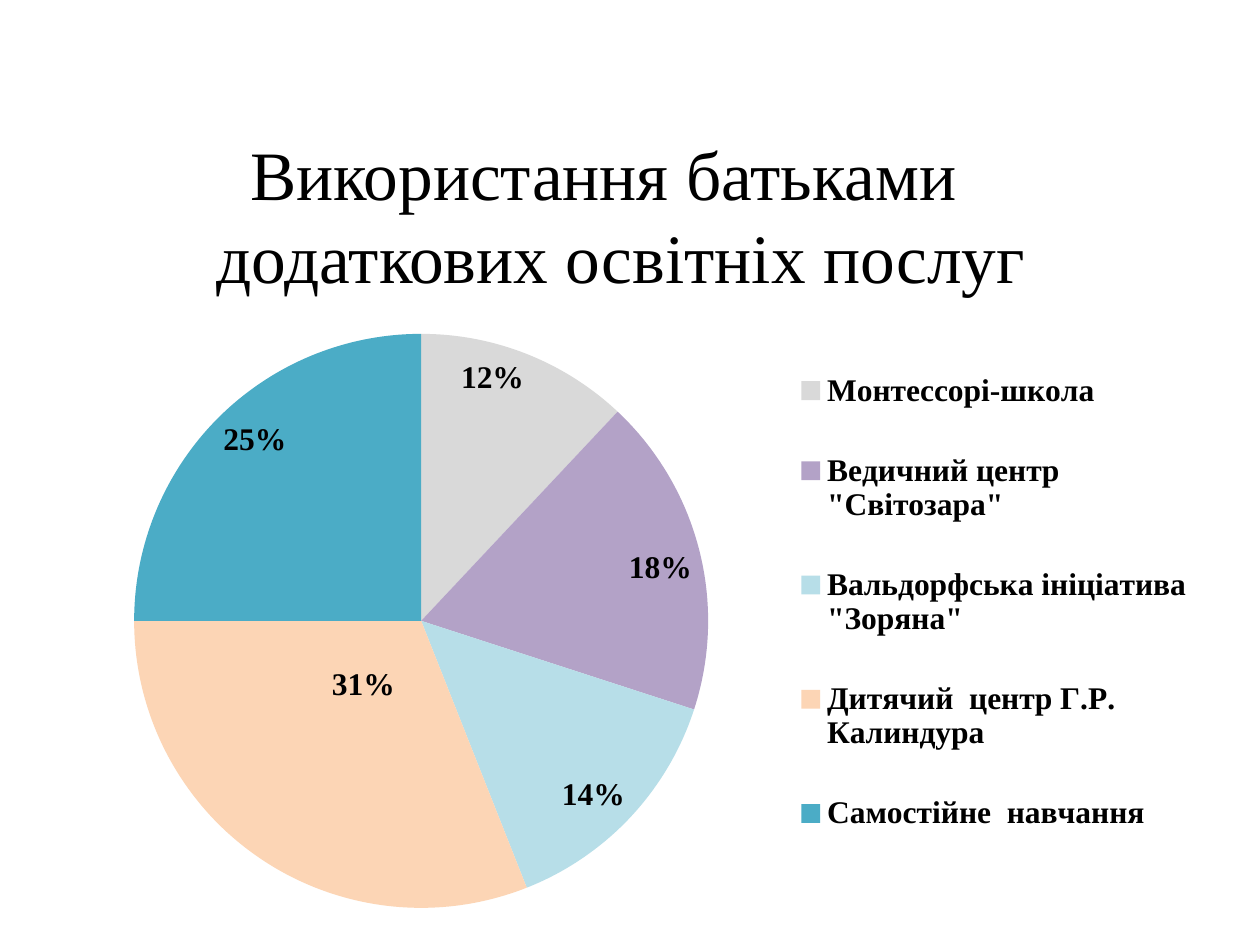
from typing import NamedTuple

import lxml.etree
import pptx
import pptx.chart.chart
import pptx.chart.data
import pptx.dml.color
import pptx.enum.chart
import pptx.enum.text
import pptx.oxml
import pptx.oxml.ns
import pptx.slide
import pptx.util

RGBColor = pptx.dml.color.RGBColor

EMU_PER_PX = 914400 // 126
FONT = "Times New Roman"
BLACK = RGBColor(0x00, 0x00, 0x00)
GREY = RGBColor(0xD9, 0xD9, 0xD9)
PURPLE = RGBColor(0xB3, 0xA2, 0xC7)
PALE_BLUE = RGBColor(0xB7, 0xDE, 0xE8)
PEACH = RGBColor(0xFC, 0xD5, 0xB5)
TEAL = RGBColor(0x4B, 0xAC, 0xC6)


class Box(NamedTuple):
    left: int
    top: int
    width: int
    height: int

    def emu(self) -> list[pptx.util.Emu]:
        return [pptx.util.Emu(length * EMU_PER_PX) for length in self]


class Service(NamedTuple):
    name: str
    percent: int
    color: RGBColor


TITLE_BOX = Box(54, 135, 1134, 158)
CHART_BOX = Box(64, 284, 1134, 624)
SERVICES = [
    Service("Монтессорі-школа", 12, GREY),
    Service('Ведичний центр "Світозара"', 18, PURPLE),
    Service('Вальдорфська ініціатива "Зоряна"', 14, PALE_BLUE),
    Service("Дитячий  центр Г.Р. Калиндура", 31, PEACH),
    Service("Самостійне  навчання", 25, TEAL),
]
MOVED_LABEL = 3


def style_font(font, *, size: float, bold: bool) -> None:
    font.name = FONT
    font.size = pptx.util.Pt(size)
    font.bold = bold
    font.color.rgb = BLACK


def add_text(slide: pptx.slide.Slide, box: Box, text: str, *, size: float, bold: bool = False) -> None:
    frame = slide.shapes.add_textbox(*box.emu()).text_frame
    frame.word_wrap = True
    frame.vertical_anchor = pptx.enum.text.MSO_ANCHOR.MIDDLE
    paragraph = frame.paragraphs[0]
    paragraph.text = text
    paragraph.alignment = pptx.enum.text.PP_ALIGN.CENTER
    for run in paragraph.runs:
        style_font(run.font, size=size, bold=bold)


def manual_layout(**settings: object) -> lxml.etree.ElementBase:
    """Build a c:layout; settings are its children in schema order."""
    children = "".join(f'<c:{tag} val="{value}"/>' for tag, value in settings.items())
    return pptx.oxml.parse_xml(
        f'<c:layout {pptx.oxml.ns.nsdecls("c")}>'
        f"<c:manualLayout>{children}</c:manualLayout></c:layout>"
    )


def replace_layout(parent, after: str | None, layout) -> None:
    """Put layout after the named child, or first in the parent."""
    for old in parent.findall(pptx.oxml.ns.qn("c:layout")):
        parent.remove(old)
    if after is None:
        parent.insert(0, layout)
    else:
        parent.find(pptx.oxml.ns.qn(after)).addnext(layout)


def show_percent(labels) -> None:
    labels.position = pptx.enum.chart.XL_LABEL_POSITION.INSIDE_END
    style_font(labels.font, size=18, bold=True)


def label_slices(plot, series) -> None:
    plot.has_data_labels = True
    for labels in (plot.data_labels, series.data_labels):
        show_percent(labels)
        labels.show_value = False
        labels.show_percentage = True
        labels.number_format = "0%"
        labels.number_format_is_linked = False
    show_percent(series.points[MOVED_LABEL].data_label)
    label = series.data_labels._element.find(pptx.oxml.ns.qn("c:dLbl"))
    label.find(pptx.oxml.ns.qn("c:showVal")).set("val", "0")
    label.find(pptx.oxml.ns.qn("c:showPercent")).set("val", "1")
    replace_layout(label, "c:idx", manual_layout(x=0.06, y=-0.24))


def add_legend(chart: pptx.chart.chart.Chart) -> None:
    chart.has_legend = True
    legend = chart.legend
    legend.position = pptx.enum.chart.XL_LEGEND_POSITION.RIGHT
    legend.include_in_layout = False
    style_font(legend.font, size=18, bold=True)
    replace_layout(
        legend._element,
        "c:legendPos",
        manual_layout(xMode="edge", yMode="edge", x=0.64, y=0.07, w=0.36, h=0.88),
    )


def add_services_pie(slide: pptx.slide.Slide, box: Box, services: list[Service]) -> None:
    data = pptx.chart.data.CategoryChartData()
    data.categories = [service.name for service in services]
    data.add_series("Series 1", [service.percent for service in services])
    chart = slide.shapes.add_chart(pptx.enum.chart.XL_CHART_TYPE.PIE, *box.emu(), data).chart
    chart.has_title = False
    style_font(chart.font, size=18, bold=True)
    plot = chart.plots[0]
    plot.vary_by_categories = True
    series = plot.series[0]
    for index, service in enumerate(services):
        fill = series.points[index].format.fill
        fill.solid()
        fill.fore_color.rgb = service.color
    label_slices(plot, series)
    add_legend(chart)
    replace_layout(
        chart._chartSpace.chart.plotArea,
        None,
        manual_layout(layoutTarget="inner", xMode="edge", yMode="edge", x=0, y=0.08, w=0.63, h=0.92),
    )


def main() -> None:
    presentation = pptx.Presentation()
    presentation.slide_width = pptx.util.Inches(10)
    presentation.slide_height = pptx.util.Inches(7.5)
    slide = presentation.slides.add_slide(presentation.slide_layouts[6])
    add_text(slide, TITLE_BOX, "Використання батьками  \vдодаткових освітніх послуг", size=39.6)
    add_services_pie(slide, CHART_BOX, SERVICES)
    presentation.save("out.pptx")


if __name__ == "__main__":
    main()
